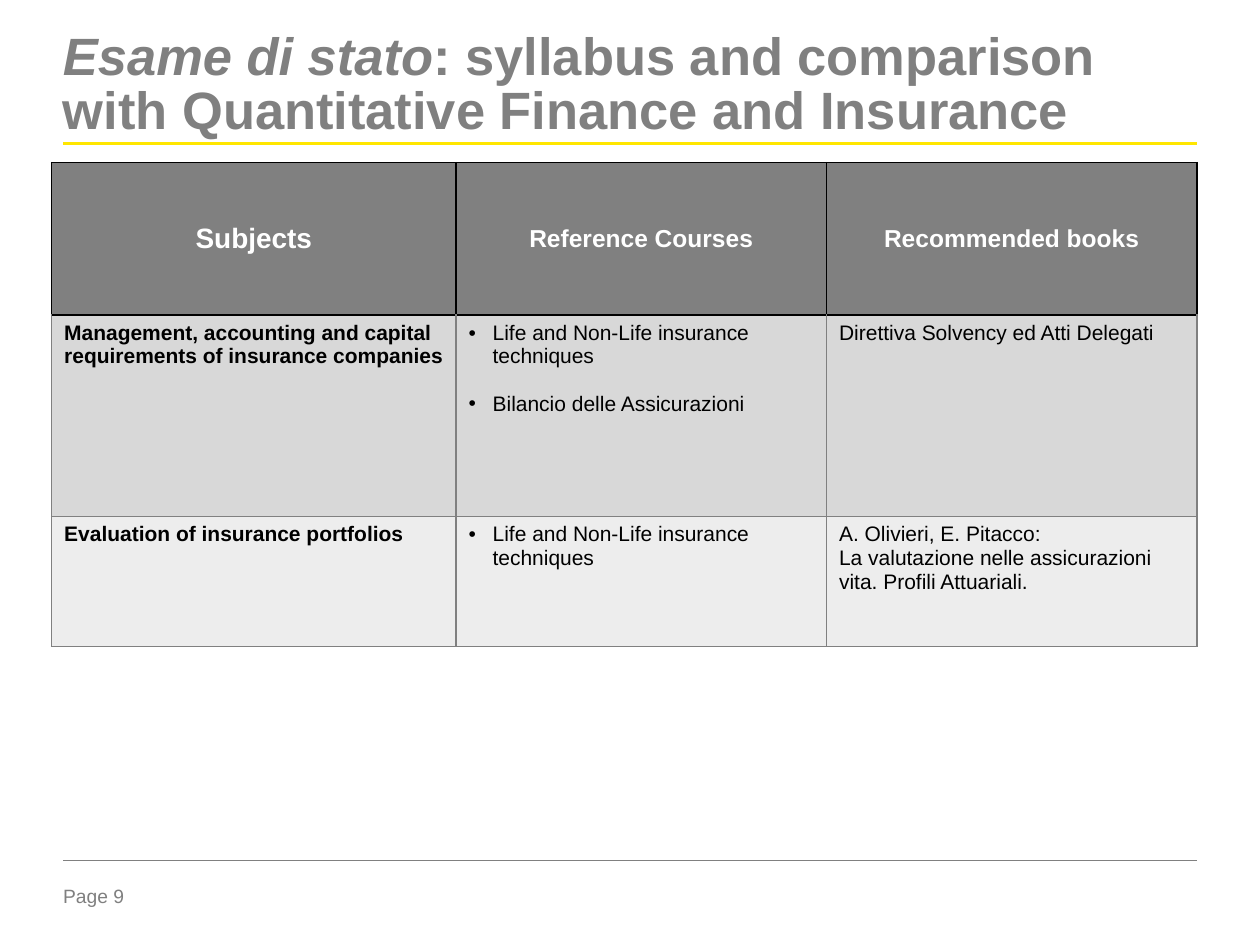
from lxml.etree import SubElement
from pptx import Presentation
from pptx.dml.color import RGBColor
from pptx.enum.shapes import MSO_CONNECTOR
from pptx.enum.text import MSO_ANCHOR, PP_ALIGN
from pptx.oxml import parse_xml
from pptx.oxml.ns import nsdecls, qn
from pptx.util import Inches, Pt

GREY, BLACK, WHITE, YELLOW = "808080", "000000", "FFFFFF", "FFE600"
LEFT, RIGHT = 0.5, 9.5
BULLET_INDENT = 0.19


def rgb(value):
    return RGBColor.from_string(value)


class SlideBuilder:
    """Holds the text style and the slide being built."""

    font = "Arial"

    def __init__(self, slide):
        self.s = slide

    def run(self, p, text, size, color, bold=False, italic=False):
        r = p.add_run()
        r.text = text
        f = r.font
        f.name, f.size, f.bold, f.italic = self.font, Pt(size), bold, italic
        f.color.rgb = rgb(color)

    def text_box(self, x, y, w, h, runs, size, top=0, spacing=None):
        """Add one paragraph of (text, bold, italic) runs."""
        sp = self.s.shapes.add_textbox(Inches(x), Inches(y), Inches(w), Inches(h))
        tf = sp.text_frame
        tf.word_wrap = True
        tf.margin_left = tf.margin_right = tf.margin_bottom = 0
        tf.margin_top = Inches(top)
        p = tf.paragraphs[0]
        p.line_spacing = spacing
        for text, bold, italic in runs:
            self.run(p, text, size, GREY, bold, italic)

    def rule(self, y, color, width):
        line = self.s.shapes.add_connector(
            MSO_CONNECTOR.STRAIGHT, Inches(LEFT), Inches(y), Inches(RIGHT), Inches(y))
        line.line.color.rgb = rgb(color)
        line.line.width = Pt(width)
        SubElement(line._element.spPr, qn("a:effectLst"))

    def table(self, x, y, widths, heights):
        frame = self.s.shapes.add_table(
            len(heights), len(widths), Inches(x), Inches(y),
            Inches(sum(widths)), Inches(sum(heights)))
        table = frame.table
        table.first_row = table.horz_banding = False
        for col, width in zip(table.columns, widths):
            col.width = Inches(width)
        for row, height in zip(table.rows, heights):
            row.height = Inches(height)
        return table

    def cell(self, cell, lines, fill, size, color=BLACK, bold=False,
             header=False, bullets=False, border=GREY, top_border=GREY):
        cell.fill.solid()
        cell.fill.fore_color.rgb = rgb(fill)
        self.borders(cell, border, top_border)
        if header:
            cell.vertical_anchor = MSO_ANCHOR.MIDDLE
        tf = cell.text_frame
        for i, line in enumerate(lines):
            p = tf.add_paragraph() if i else tf.paragraphs[0]
            if header:
                p.alignment = PP_ALIGN.CENTER
            if bullets:
                if i:
                    p.space_before = Pt(13.5)
                self.bullet(p)
            self.run(p, line, size, color, bold)

    def borders(self, cell, color, top_color):
        tc_pr = cell._tc.get_or_add_tcPr()
        sides = (("L", color), ("R", color), ("T", top_color), ("B", color))
        for i, (side, side_color) in enumerate(sides):
            tc_pr.insert(i, parse_xml(
                f'<a:ln{side} {nsdecls("a")} w="{Pt(1)}"><a:solidFill>'
                f'<a:srgbClr val="{side_color}"/></a:solidFill></a:ln{side}>'))

    def bullet(self, p):
        p_pr = p._p.get_or_add_pPr()
        p_pr.set("marL", str(Inches(BULLET_INDENT)))
        p_pr.set("indent", str(-Inches(BULLET_INDENT)))
        SubElement(p_pr, qn("a:buFont"), typeface=self.font)
        SubElement(p_pr, qn("a:buChar"), char="•")


HEADERS = [("Subjects", 16), ("Reference Courses", 14), ("Recommended books", 14)]
SUBJECTS = [
    ("D8D8D8", BLACK,
     ["Management, accounting and capital requirements of insurance companies"],
     ["Life and Non-Life insurance techniques", "Bilancio delle Assicurazioni"],
     ["Direttiva Solvency ed Atti Delegati"]),
    ("EDEDED", GREY,
     ["Evaluation of insurance portfolios"],
     ["Life and Non-Life insurance techniques"],
     ["A. Olivieri, E. Pitacco:",
      "La valutazione nelle assicurazioni vita. Profili Attuariali."]),
]


def main():
    prs = Presentation()
    prs.slide_width, prs.slide_height = Inches(10), Inches(7.5)
    b = SlideBuilder(prs.slides.add_slide(prs.slide_layouts[6]))

    b.text_box(LEFT, 7.02, 0.79, 0.22, [("Page 9", False, False)], 11)
    b.rule(1.14, YELLOW, 1.5)
    b.rule(6.83, GREY, 0.25)
    b.text_box(LEFT, 0.22, RIGHT - LEFT, 0.94, [
        ("Esame di stato", True, True),
        (": syllabus and comparison with Quantitative Finance and Insurance", True, False),
    ], 30, top=0.04, spacing=0.85)

    table = b.table(0.41, 1.29, [3.21, 2.94, 2.94], [1.21, 1.6, 1.03])
    for col, (title, size) in enumerate(HEADERS):
        b.cell(table.cell(0, col), [title], GREY, size, WHITE, bold=True,
               header=True, border=BLACK, top_border=BLACK)
    for row, (fill, top, *columns) in enumerate(SUBJECTS, start=1):
        for col, lines in enumerate(columns):
            b.cell(table.cell(row, col), lines, fill, 12, bold=col == 0,
                   bullets=col == 1, top_border=top)

    prs.save("out.pptx")


if __name__ == "__main__":
    main()
